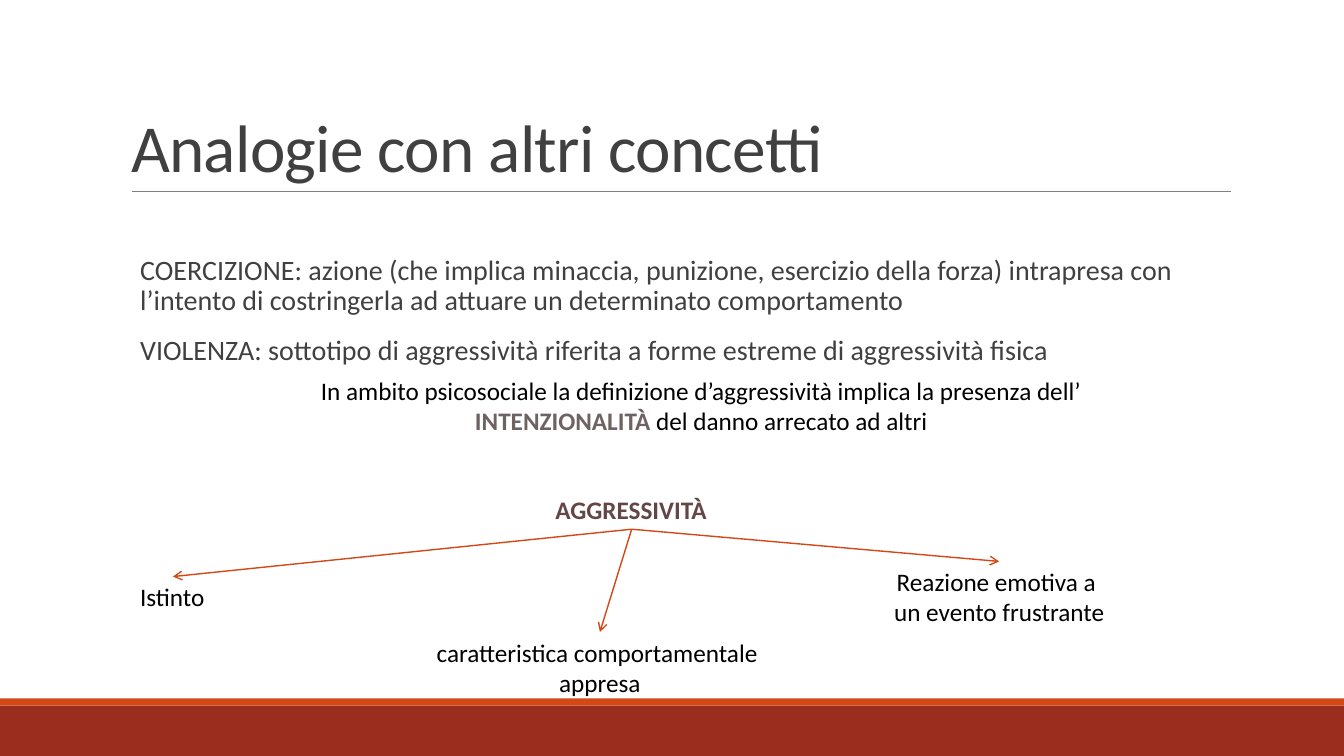
"""Build the slide that compares aggression with related concepts."""
import pptx
import pptx.util
import pptx.dml.color
import pptx.enum.dml
import pptx.enum.shapes
import pptx.enum.text
import pptx.oxml
import pptx.oxml.ns
import lxml.etree

Inches = pptx.util.Inches
Pt = pptx.util.Pt
RGBColor = pptx.dml.color.RGBColor
Align = pptx.enum.text.PP_ALIGN
Anchor = pptx.enum.text.MSO_ANCHOR
Fit = pptx.enum.text.MSO_AUTO_SIZE
qn = pptx.oxml.ns.qn

RUST = RGBColor(0x9B, 0x2D, 0x1F)
ORANGE = RGBColor(0xD3, 0x48, 0x17)
GRAY = RGBColor(0x80, 0x80, 0x80)
DARK = RGBColor(0x40, 0x40, 0x40)
BLACK = RGBColor(0, 0, 0)
MAUVE = RGBColor(0x6E, 0x62, 0x63)
PLUM = RGBColor(0x64, 0x46, 0x46)


def style(font, size, color, bold=False):
    font.name = "Calibri"
    font.size = Pt(size)
    font.color.rgb = color
    font.bold = bold


def link(start, end, color, width):
    line = slide.shapes.add_connector(
        pptx.enum.shapes.MSO_CONNECTOR.STRAIGHT,
        *[Inches(v) for v in start + end])
    line.line.color.rgb = color
    line.line.width = Pt(width)
    lxml.etree.SubElement(line._element.spPr, qn("a:effectLst"))
    return line


deck = pptx.Presentation()
deck.slide_width = Inches(13.33)
deck.slide_height = Inches(7.5)
slide = deck.slides.add_slide(deck.slide_layouts[1])

for top, height, color in [(7, 0.5, RUST), (6.93, 0.07, ORANGE)]:
    band = slide.shapes.add_shape(
        pptx.enum.shapes.MSO_SHAPE.RECTANGLE,
        0, Inches(top), deck.slide_width, Inches(height))
    band.shadow.inherit = False
    band.fill.solid()
    band.fill.fore_color.rgb = color
    band.line.fill.background()

link((1.31, 1.9), (12.21, 1.9), GRAY, 0.5)

title = slide.shapes.title
title.left, title.top = Inches(1.2), Inches(0.31)
title.width, title.height = Inches(11), Inches(1.59)
title.text_frame.text = "Analogie con altri concetti"
title.text_frame.auto_size = Fit.NONE
title.text_frame.vertical_anchor = Anchor.BOTTOM
head = title.text_frame.paragraphs[0]
head.alignment = Align.LEFT
head.line_spacing = 0.85
style(head.font, 48, DARK)
head.runs[0].font._element.set("spc", "-50")

body = slide.placeholders[1]
body.left, body.top = Inches(1.29), Inches(2.49)
body.width, body.height = Inches(11), Inches(1.51)
frame = body.text_frame
frame.text = (
    "COERCIZIONE: azione (che implica minaccia, punizione, esercizio della "
    "forza) intrapresa con l’intento di costringerla ad attuare un "
    "determinato comportamento\n"
    "VIOLENZA: sottotipo di aggressività riferita a forme estreme di "
    "aggressività fisica")
frame.auto_size = Fit.NONE
frame.margin_left = frame.margin_right = 0
for para in frame.paragraphs:
    para.line_spacing = 0.9
    para.space_before = Pt(12)
    para.space_after = Pt(2)
    style(para.font, 20, DARK)
    props = para._p.get_or_add_pPr()
    props.set("marL", str(Inches(0.1)))
    props.set("indent", str(-Inches(0.1)))
    props.insert_element_before(
        pptx.oxml.parse_xml(
            '<a:buChar xmlns:a="http://schemas.openxmlformats.org/'
            'drawingml/2006/main" char=" "/>'),
        "a:tabLst", "a:defRPr", "a:extLst")

notes = [
    ((1.71, 3.67, 10.49, 0.71), True, BLACK,
     "In ambito psicosociale la definizione d’aggressività implica la "
     "presenza dell’\n"),
    ((5.41, 4.85, 1.71, 0.4), False, PLUM, "AGGRESSIVITÀ"),
    ((1.29, 5.72, 0.85, 0.4), False, BLACK, "Istinto"),
    ((3.97, 6.27, 3.96, 0.71), True, BLACK,
     "caratteristica comportamentale \nappresa"),
    ((8.65, 5.57, 2.52, 0.71), True, BLACK,
     "Reazione emotiva a \nun evento frustrante"),
]
boxes = []
for place, wrap, color, text in notes:
    box = slide.shapes.add_textbox(*[Inches(v) for v in place])
    box.text_frame.text = text
    box.text_frame.word_wrap = wrap
    box.text_frame.auto_size = Fit.SHAPE_TO_FIT_TEXT
    for para in box.text_frame.paragraphs:
        para.alignment = Align.CENTER if wrap else Align.LEFT
        style(para.font, 18, color, color == PLUM)
    boxes.append(box)

intro, root, *leaves = boxes
last = intro.text_frame.paragraphs[1]
for text, color, bold in [("INTENZIONALITÀ ", MAUVE, True),
                          ("del danno arrecato ad altri", BLACK, False)]:
    run = last.add_run()
    run.text = text
    style(run.font, 18, color, bold)

for leaf in leaves:
    arrow = link((0, 0), (1, 1), ORANGE, 1)
    arrow.begin_connect(root, 2)
    arrow.end_connect(leaf, 0)
    tip = lxml.etree.SubElement(arrow.line._get_or_add_ln(), qn("a:tailEnd"))
    tip.set("type", "arrow")

deck.save("out.pptx")
